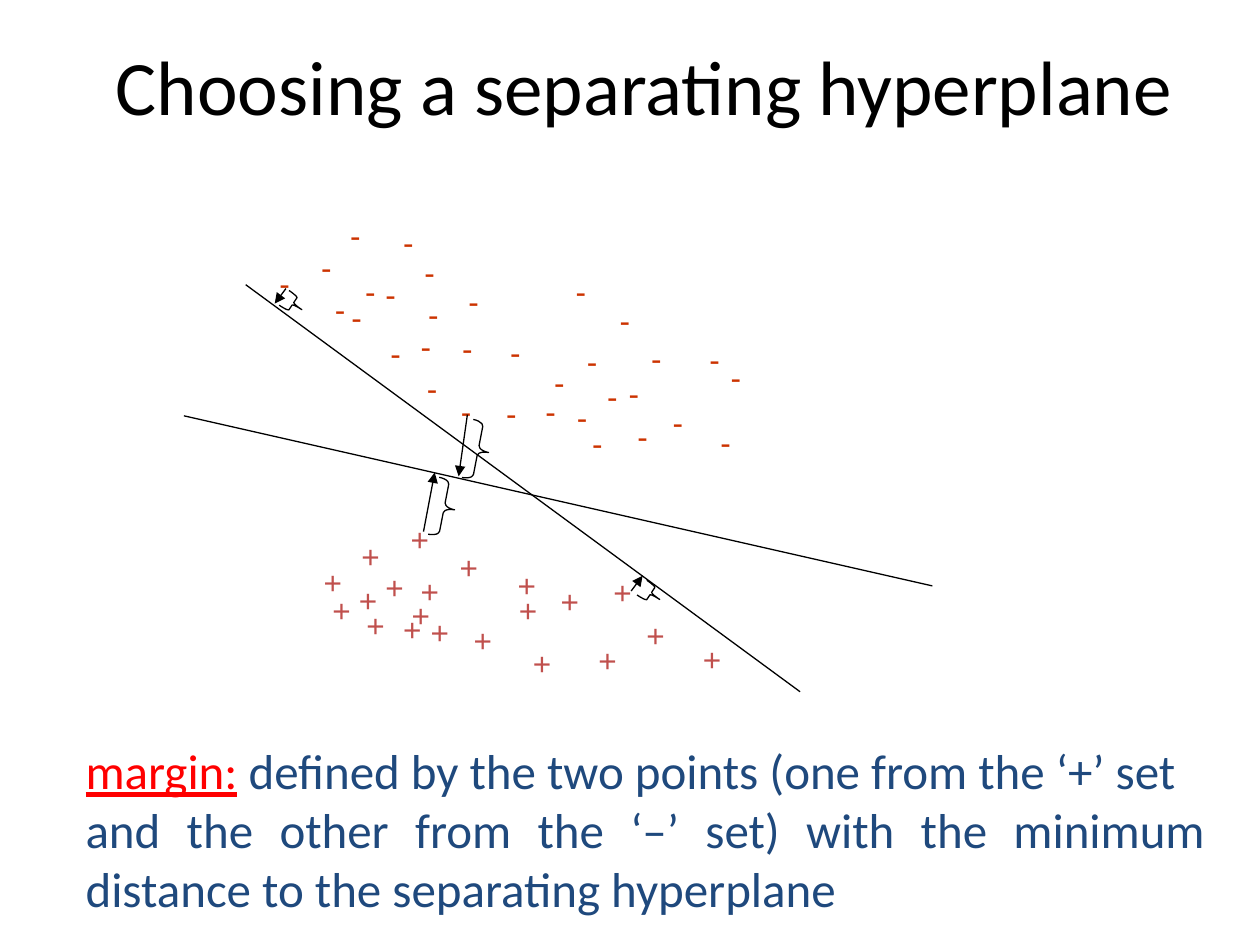
from dataclasses import dataclass

from lxml.etree import SubElement
from pptx import Presentation
from pptx.dml.color import RGBColor
from pptx.enum.shapes import MSO_CONNECTOR, MSO_SHAPE
from pptx.enum.text import MSO_ANCHOR, MSO_AUTO_SIZE, PP_ALIGN
from pptx.oxml.ns import qn
from pptx.slide import Slide
from pptx.util import Pt

BLACK = RGBColor(0x00, 0x00, 0x00)
RED = RGBColor(0xFF, 0x00, 0x00)
NAVY = RGBColor(0x1F, 0x49, 0x7D)
PLUS_COLOR = RGBColor(0xC0, 0x50, 0x4D)
MINUS_COLOR = RGBColor(0xCC, 0x33, 0x00)
LINE_WIDTH = 0.75


@dataclass(frozen=True)
class Span:
    text: str
    color: RGBColor
    underline: bool = False


@dataclass(frozen=True)
class PointSet:
    """Points of one class: its sign, the size of a label, and each label's left and top."""
    sign: str
    color: RGBColor
    width: float
    corners: tuple[tuple[float, float], ...]


@dataclass(frozen=True)
class Line:
    start: tuple[float, float]
    end: tuple[float, float]


@dataclass(frozen=True)
class Brace:
    left: float
    top: float
    width: float
    height: float
    rotation: float
    curl: float


POINT_SETS = (
    PointSet("+", PLUS_COLOR, 29.5, (
        (313.2, 329), (199.4, 303.1), (177.8, 318.2), (213.1, 321.1), (227.5, 293.8),
        (394.6, 362.2), (182.9, 334.1), (289.4, 334.1), (223.2, 344.9), (288.7, 319.7),
        (233.3, 323.3), (239, 347), (255.6, 309.6), (228.2, 337), (198, 328.3),
        (362.2, 348.5), (334.8, 362.9), (297.4, 364.3), (263.5, 351.4), (202.3, 342.7),
        (343.4, 324),
    )),
    PointSet("-", MINUS_COLOR, 22.3, (
        (309.6, 203.8), (339.8, 211.7), (193, 120.2), (237.6, 164.9), (233.3, 183.6),
        (223.2, 123.8), (377.3, 226.8), (365, 190.1), (352.1, 210.2), (284.4, 186.5),
        (328.3, 192.2), (357.1, 234.7), (216, 187.2), (257, 184.3), (398.2, 190.8),
        (236.9, 207.4), (410.4, 200.9), (282.2, 221.8), (256.3, 220.3), (404.6, 238.3),
        (331.2, 239), (260.6, 157.7), (235.4, 141.1), (184.3, 162), (347, 168.5),
        (321.8, 151.9), (304.6, 220.3), (176.4, 138.2), (322.6, 223.9), (193.7, 167),
        (201.6, 151.9), (213.1, 153.4), (152.6, 147.6),
    )),
)
HYPERPLANES = (
    Line((140.4, 162.7), (457.2, 395.3)),
    Line((105.1, 237.6), (532.8, 334.8)),
)
MARGIN_ARROWS = (
    Line((360.7, 337.7), (367.2, 329)),
    Line((242, 303.8), (248.4, 270)),
    Line((267.1, 236.9), (262.1, 272.2)),
    Line((163.4, 164.9), (157, 173.5)),
)
BRACES = (
    Brace(365.8, 334.1, 12.2, 10.1, 213.7, 0.083),
    Brace(247.7, 273.6, 12.2, 33.1, 191, 0.232),
    Brace(267.1, 240.5, 12.2, 33.8, 191, 0.235),
    Brace(161.3, 168.5, 12.2, 10.1, 213.7, 0.083),
)


def add_text(page: Slide, paragraphs: list[list[Span]], *, left: float, top: float,
             width: float, height: float, size: float, font: str = "Calibri",
             align: PP_ALIGN = PP_ALIGN.LEFT, anchor: MSO_ANCHOR = MSO_ANCHOR.TOP,
             wrap: bool = True, grow: bool = True) -> None:
    box = page.shapes.add_textbox(Pt(left), Pt(top), Pt(width), Pt(height))
    frame = box.text_frame
    frame.word_wrap = wrap
    frame.vertical_anchor = anchor
    frame.auto_size = MSO_AUTO_SIZE.SHAPE_TO_FIT_TEXT if grow else MSO_AUTO_SIZE.NONE
    for index, spans in enumerate(paragraphs):
        para = frame.add_paragraph() if index else frame.paragraphs[0]
        para.alignment = align
        for span in spans:
            run = para.add_run()
            run.text = span.text
            run.font.name = font
            run.font.size = Pt(size)
            run.font.color.rgb = span.color
            run.font.underline = span.underline


def add_points(page: Slide, points: PointSet) -> None:
    for left, top in points.corners:
        add_text(page, [[Span(points.sign, points.color)]], left=left, top=top,
                 width=points.width, height=28.8, size=18, font="Arial", wrap=False)


def add_line(page: Slide, line: Line, arrow: bool = False) -> None:
    connector = page.shapes.add_connector(
        MSO_CONNECTOR.STRAIGHT, *(Pt(value) for value in line.start + line.end))
    connector.line.color.rgb = BLACK
    connector.line.width = Pt(LINE_WIDTH)
    if arrow:
        SubElement(connector.line._get_or_add_ln(), qn("a:tailEnd"), type="triangle")
    SubElement(connector._element.spPr, qn("a:effectLst"))


def add_brace(page: Slide, brace: Brace) -> None:
    shape = page.shapes.add_shape(MSO_SHAPE.LEFT_BRACE, Pt(brace.left), Pt(brace.top),
                                  Pt(brace.width), Pt(brace.height))
    shape.adjustments[0] = brace.curl
    shape.rotation = brace.rotation
    shape.shadow.inherit = False
    shape.fill.background()
    shape.line.color.rgb = BLACK
    shape.line.width = Pt(LINE_WIDTH)


def main() -> None:
    deck = Presentation()
    deck.slide_width, deck.slide_height = Pt(720), Pt(540)
    page = deck.slides.add_slide(deck.slide_layouts[6])

    add_text(page, [[Span("Choosing a separating hyperplane", BLACK)]],
             left=36, top=18, width=664.6, height=61.2, size=44,
             align=PP_ALIGN.CENTER, anchor=MSO_ANCHOR.MIDDLE, grow=False)
    for points in POINT_SETS:
        add_points(page, points)
    for hyperplane in HYPERPLANES:
        add_line(page, hyperplane)
    for margin_arrow in MARGIN_ARROWS:
        add_line(page, margin_arrow, arrow=True)
    for brace in BRACES:
        add_brace(page, brace)

    definition = [
        [Span("margin:", RED, underline=True), Span(" ", RED),
         Span("defined by the two points (one from the ‘+’ set", NAVY)],
        [Span("and the other from the ‘–’ set) with the minimum distance "
              "to the separating hyperplane", NAVY)],
    ]
    add_text(page, definition, left=41.8, top=419.8, width=653.8, height=108.7,
             size=28, align=PP_ALIGN.JUSTIFY)
    deck.save("out.pptx")


if __name__ == "__main__":
    main()
